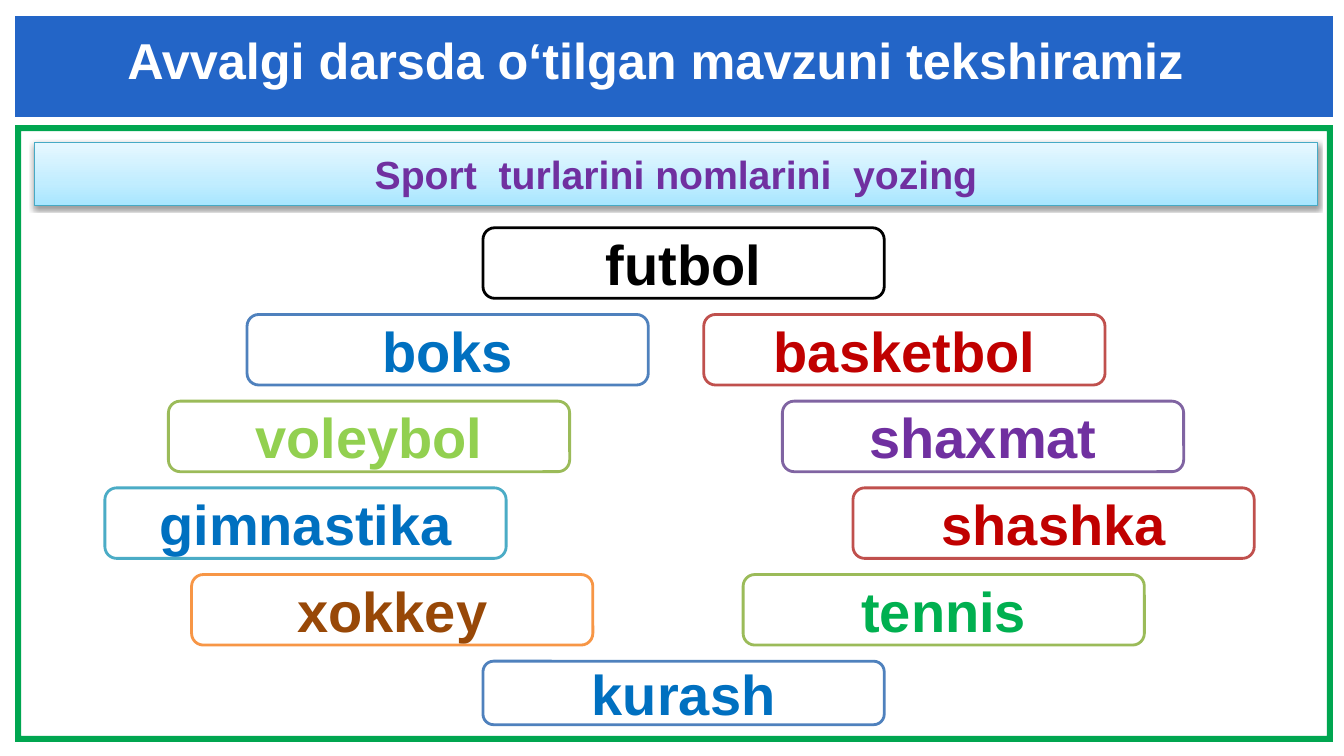
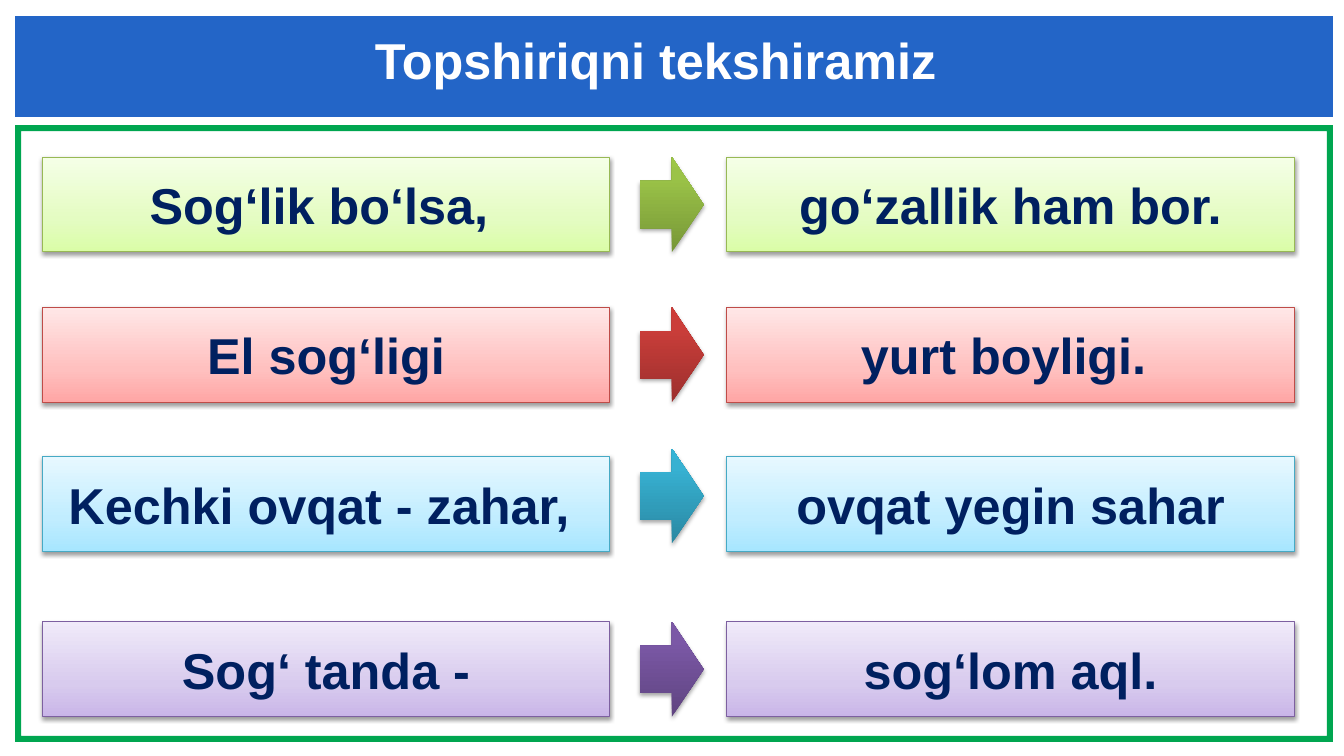
from copy import deepcopy
from dataclasses import dataclass

from lxml.etree import SubElement
from pptx import Presentation
from pptx.dml.color import RGBColor
from pptx.enum.shapes import MSO_SHAPE
from pptx.enum.text import MSO_ANCHOR, MSO_AUTO_SIZE, PP_ALIGN
from pptx.oxml.ns import qn
from pptx.util import Inches, Pt

WHITE = RGBColor(0xFF, 0xFF, 0xFF)
BLACK = RGBColor(0x00, 0x00, 0x00)
BAND_BLUE = RGBColor(0x23, 0x65, 0xC7)
FRAME_GREEN = RGBColor(0x00, 0xA6, 0x50)
NAVY = RGBColor(0x00, 0x20, 0x60)
BLUE = RGBColor(0x00, 0x70, 0xC0)
RED = RGBColor(0xC0, 0x00, 0x00)
PURPLE = RGBColor(0x70, 0x30, 0xA0)
LIME = RGBColor(0x92, 0xD0, 0x50)
GREEN = RGBColor(0x00, 0xB0, 0x50)
BROWN = RGBColor(0x98, 0x48, 0x07)
BLUE_EDGE = RGBColor(0x4F, 0x81, 0xBD)
RED_EDGE = RGBColor(0xC0, 0x50, 0x4D)
OLIVE_EDGE = RGBColor(0x9B, 0xBB, 0x59)
VIOLET_EDGE = RGBColor(0x80, 0x64, 0xA2)
AQUA_EDGE = RGBColor(0x4B, 0xAC, 0xC6)
ORANGE_EDGE = RGBColor(0xF7, 0x96, 0x46)


@dataclass
class Box:
    left: float
    top: float
    width: float
    height: float

    def inner(self, left, top, width, height):
        return Box(self.left + left, self.top + top, width, height)

    def lengths(self):
        return [Inches(v) for v in (self.left, self.top, self.width, self.height)]


@dataclass
class Theme:
    card: tuple
    edge: RGBColor
    arrow: tuple


def colours(*codes):
    return tuple(RGBColor.from_string(code) for code in codes)


LEAF = Theme(colours("DAFDA7", "E4FCC2", "F5FFE7"), RGBColor(0x98, 0xB9, 0x55),
             colours("779737", "9BC348", "9DC746"))
ROSE = Theme(colours("FFA6A5", "FFC0BF", "FFE7E7"), RGBColor(0xBF, 0x4C, 0x48),
             colours("9C2F2D", "CB3E3A", "CE3B37"))
SKY = Theme(colours("A7E6FF", "C1EDFF", "E7F8FF"), RGBColor(0x46, 0xAA, 0xC5),
            colours("2A88A2", "37B1D2", "34B4D6"))
LILAC = Theme(colours("C9B5E8", "D8CBEE", "F0EAF9"), RGBColor(0x7D, 0x60, 0xA0),
              colours("5F4480", "7B58A6", "7C57A8"))

BAND = Box(0.15, 0.16, 13.07, 1.0)
CONTENT = Box(0.15, 1.24, 13.07, 6.12)
FRAME_THICKNESS = 0.06
TITLE_FRAME = {
    "margin_left": 0, "margin_top": 0, "margin_right": 0, "margin_bottom": 0,
    "word_wrap": True, "auto_size": MSO_AUTO_SIZE.NONE,
    "vertical_anchor": MSO_ANCHOR.TOP,
}
SHAPE_FRAME = {"word_wrap": True, "vertical_anchor": MSO_ANCHOR.MIDDLE}

SPORT_ROWS = [
    [(4.64, "futbol", BLACK, BLACK)],
    [(2.30, "boks", BLUE, BLUE_EDGE), (6.83, "basketbol", RED, RED_EDGE)],
    [(1.52, "voleybol", LIME, OLIVE_EDGE), (7.61, "shaxmat", PURPLE, VIOLET_EDGE)],
    [(0.89, "gimnastika", BLUE, AQUA_EDGE), (8.31, "shashka", RED, RED_EDGE)],
    [(1.75, "xokkey", BROWN, ORANGE_EDGE), (7.22, "tennis", GREEN, OLIVE_EDGE)],
    [(4.64, "kurash", BLUE, BLUE_EDGE)],
]
PROVERBS = [
    (0.32, 0.32, "Sog‘lik bo‘lsa, ", "go‘zallik ham bor.", LEAF),
    (1.81, 1.81, "El sog‘ligi", "yurt boyligi. ", ROSE),
    (3.29, 3.21, "Kechki ovqat - zahar, ", "ovqat yegin sahar", SKY),
    (4.93, 4.93, "Sog‘ tanda -", "sog‘lom aql.", LILAC),
]


def apply(target, values):
    for name, value in values.items():
        setattr(target, name, value)


def write(holder, text, size, colour, frame_format=SHAPE_FRAME):
    apply(holder.text_frame, frame_format)
    line = holder.text_frame.paragraphs[0]
    line.alignment = PP_ALIGN.CENTER
    words = line.add_run()
    words.text = text
    apply(words.font, {"name": "Arial", "size": Pt(size), "bold": True})
    words.font.color.rgb = colour


def place(slide, preset, box, fill=None, edge=None, edge_width=0.75):
    item = slide.shapes.add_shape(preset, *box.lengths())
    item.shadow.inherit = False
    if fill is not None:
        item.fill.solid()
        item.fill.fore_color.rgb = fill
    if edge is None:
        item.line.fill.background()
    else:
        item.line.color.rgb = edge
        item.line.width = Pt(edge_width)
    return item


def shade(item, stop_colours, middle):
    item.fill.gradient()
    item.fill.gradient_angle = 90
    stop_list = item._element.spPr.find(".//" + qn("a:gsLst"))
    stop_list.append(deepcopy(stop_list[0]))
    positions = (0, middle, 1)
    for stop, colour, position in zip(item.fill.gradient_stops, stop_colours, positions):
        stop.color.rgb = colour
        stop.position = position


def cast_shadow(item, distance, opacity):
    effects = item._element.spPr.find(qn("a:effectLst"))
    outer = SubElement(effects, qn("a:outerShdw"), blurRad=str(Pt(3.1)),
                       dist=str(Pt(distance)), dir="5400000", rotWithShape="0")
    black = SubElement(outer, qn("a:srgbClr"), val="000000")
    SubElement(black, qn("a:alpha"), val=str(opacity * 1000))


def place_card(slide, box, theme, text, size, colour):
    card = place(slide, MSO_SHAPE.RECTANGLE, box, edge=theme.edge)
    shade(card, theme.card, 0.35)
    cast_shadow(card, 1.6, 38)
    write(card, text, size, colour)


def place_arrow(slide, box, theme):
    arrow = place(slide, MSO_SHAPE.RIGHT_ARROW, box)
    shade(arrow, theme.arrow, 0.8)
    cast_shadow(arrow, 1.8, 35)


def furnish_layout(layout, slide):
    band = place(slide, MSO_SHAPE.RECTANGLE, BAND, BAND_BLUE)
    frame = place(slide, MSO_SHAPE.FRAME, CONTENT, FRAME_GREEN)
    frame.adjustments[0] = FRAME_THICKNESS / CONTENT.height
    for part in (band, frame):
        layout.shapes._spTree.insert(2, part._element)
    title_box = BAND.inner(0.53, 0.13, 11.65, 0.71)
    names = ("left", "top", "width", "height")
    apply(layout.placeholders[0], dict(zip(names, title_box.lengths())))


def add_titled_slide(deck, layout, title):
    slide = deck.slides.add_slide(layout)
    write(slide.shapes.title, title, 36, WHITE, TITLE_FRAME)
    return slide


def place_sports(slide, box):
    place_card(slide, box.inner(0.19, 0.17, 12.73, 0.63), SKY,
               "Sport  turlarini nomlarini  yozing", 28, PURPLE)
    last_row = len(SPORT_ROWS) - 1
    for row, sports in enumerate(SPORT_ROWS):
        height = 0.63 if row == last_row else 0.7
        for left, name, colour, edge in sports:
            sport = place(slide, MSO_SHAPE.ROUNDED_RECTANGLE,
                          box.inner(left, 1.02 + 0.86 * row, 3.98, height),
                          WHITE, edge, 2)
            write(sport, name, 40, colour)


def place_proverbs(slide, box):
    for card_top, arrow_top, opening, ending, theme in PROVERBS:
        for left, text in ((0.27, opening), (7.06, ending)):
            place_card(slide, box.inner(left, card_top, 5.63, 0.94),
                       theme, text, 36, NAVY)
        place_arrow(slide, box.inner(6.2, arrow_top, 0.63, 0.94), theme)


def main():
    deck = Presentation()
    apply(deck, {"slide_width": Inches(13.33), "slide_height": Inches(7.5)})
    layout = deck.slide_layouts[5]
    sports = add_titled_slide(deck, layout, "Avvalgi darsda o‘tilgan mavzuni tekshiramiz")
    furnish_layout(layout, sports)
    place_sports(sports, CONTENT)
    proverbs = add_titled_slide(deck, layout, "Topshiriqni tekshiramiz")
    place_proverbs(proverbs, CONTENT)
    deck.save("out.pptx")


if __name__ == "__main__":
    main()
